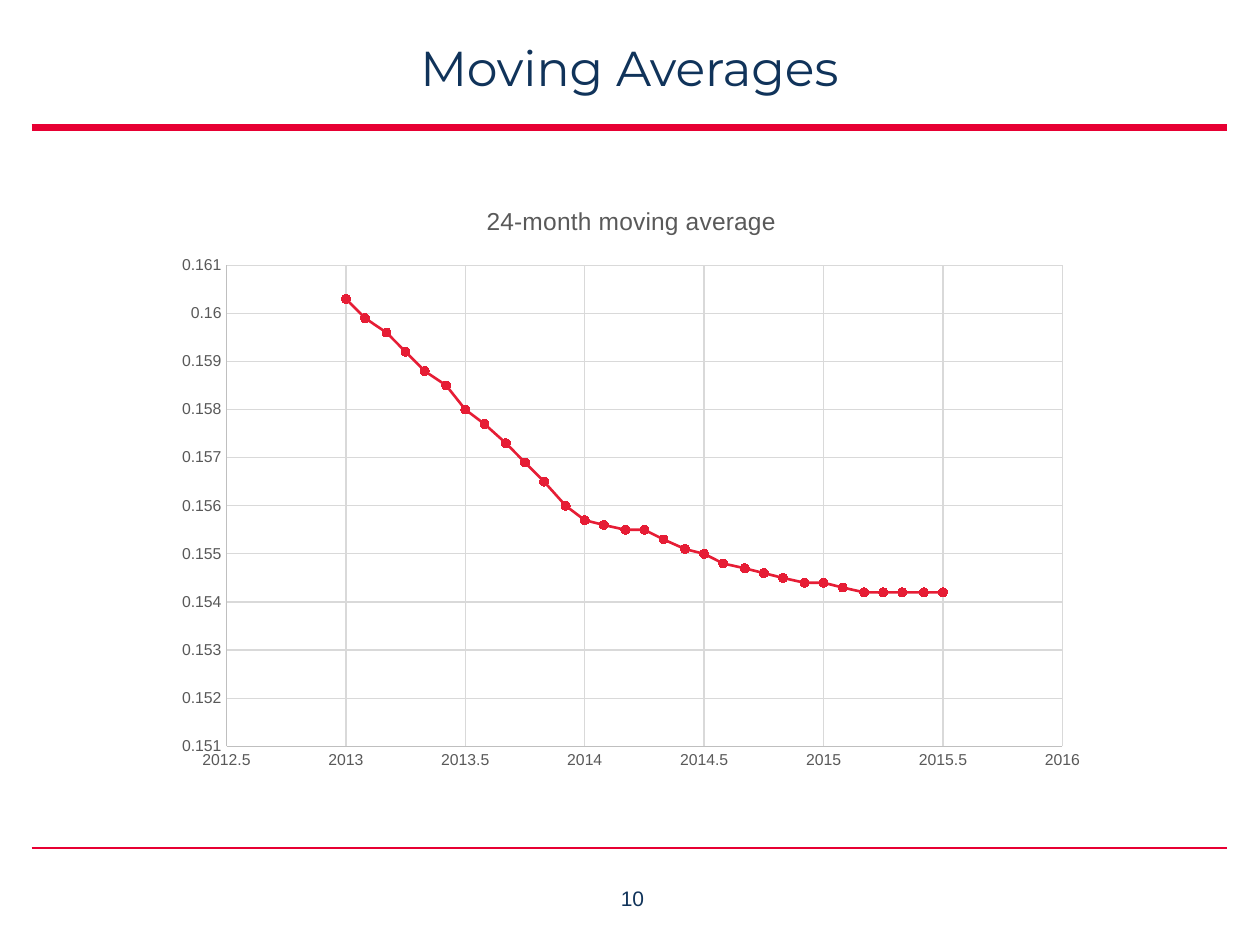
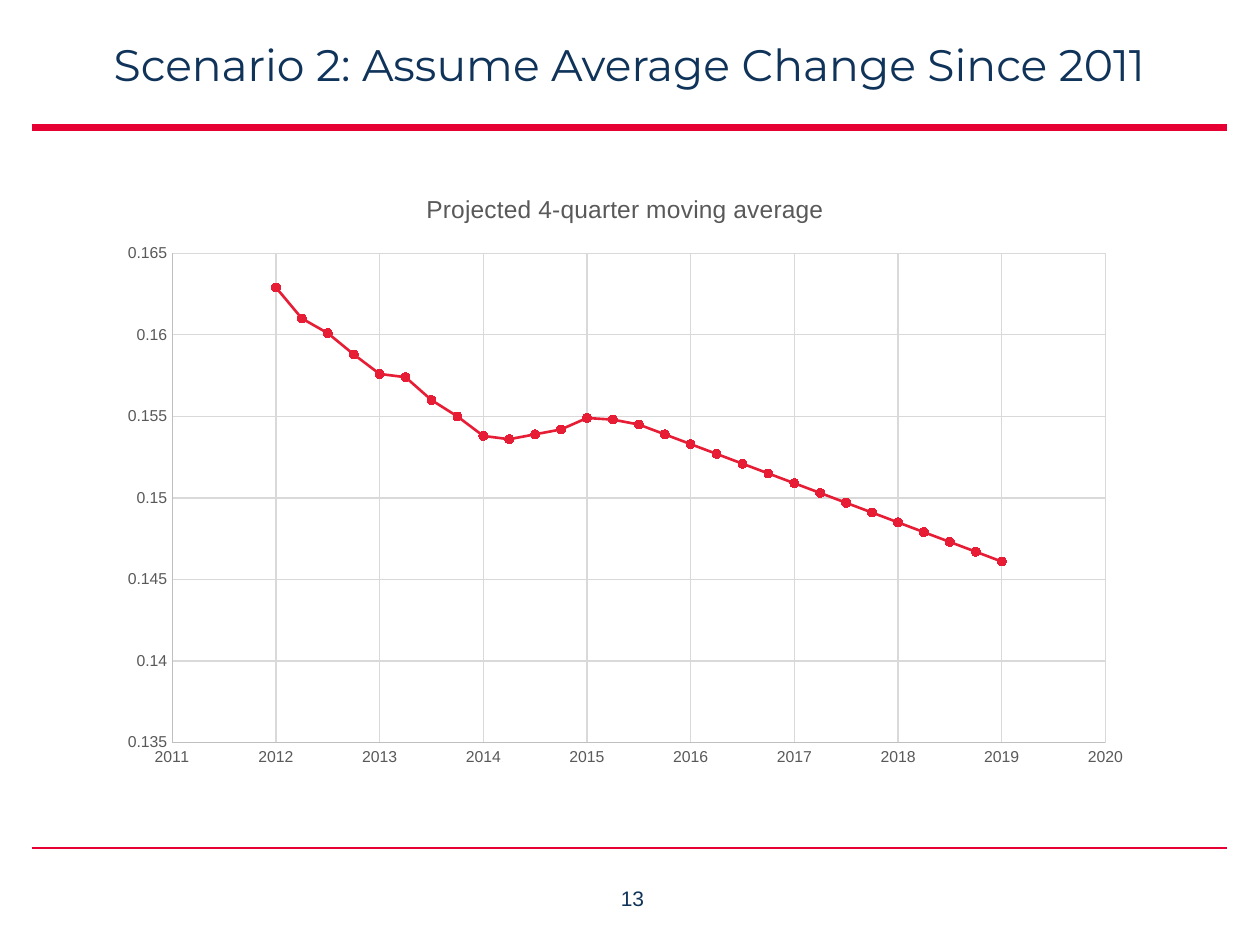
from lxml import etree
from pptx import Presentation
from pptx.chart.data import XyChartData
from pptx.dml.color import RGBColor
from pptx.enum.chart import XL_CHART_TYPE, XL_MARKER_STYLE, XL_TICK_MARK
from pptx.enum.shapes import MSO_CONNECTOR
from pptx.enum.text import MSO_ANCHOR, MSO_AUTO_SIZE, PP_ALIGN
from pptx.oxml.ns import qn
from pptx.util import Inches, Pt

SCATTER = XL_CHART_TYPE.XY_SCATTER_LINES
CIRCLE = XL_MARKER_STYLE.CIRCLE
NO_TICK = XL_TICK_MARK.NONE
STRAIGHT = MSO_CONNECTOR.STRAIGHT
TOP = MSO_ANCHOR.TOP
CENTER = PP_ALIGN.CENTER
NO_FIT = MSO_AUTO_SIZE.NONE

NAVY, RULE_RED, SERIES_RED = "10335A", "E70033", "E61D35"
CHART_GREY, AXIS_GREY, GRID_GREY = "595959", "BFBFBF", "D9D9D9"
TITLE_FONT, BODY_FONT = "Montserrat", "Arial"
RULE_LEFT, RULE_RIGHT = 0.25, 9.74

MONTHLY_AVERAGES = [
    0.1603, 0.1599, 0.1596, 0.1592, 0.1588, 0.1585, 0.1580, 0.1577,
    0.1573, 0.1569, 0.1565, 0.1560, 0.1557, 0.1556, 0.1555, 0.1555,
    0.1553, 0.1551, 0.1550, 0.1548, 0.1547, 0.1546, 0.1545, 0.1544,
    0.1544, 0.1543, 0.1542, 0.1542, 0.1542, 0.1542, 0.1542,
]
QUARTERLY_AVERAGES = [
    0.1629, 0.1610, 0.1601, 0.1588, 0.1576, 0.1574, 0.1560, 0.1550,
    0.1538, 0.1536, 0.1539, 0.1542, 0.1549, 0.1548, 0.1545,
]
QUARTERLY_CHANGE = -0.0006
PROJECTED_QUARTERS = 14


def colour(hex_text):
    """Turn a hex string into a colour."""
    return RGBColor.from_string(hex_text)


def set_font(font, name, size, hex_text):
    """Set the face, size and colour of a font."""
    font.name, font.size, font.bold = name, Pt(size), False
    font.color.rgb = colour(hex_text)


def set_line(line, hex_text, width):
    """Set the colour and width of a line."""
    line.color.rgb = colour(hex_text)
    line.width = Pt(width)


def add_rule(page, y, width):
    """Draw a red rule across the page."""
    rule = page.shapes.add_connector(
        STRAIGHT, Inches(RULE_LEFT), Inches(y), Inches(RULE_RIGHT), Inches(y))
    set_line(rule.line, RULE_RED, width)
    etree.SubElement(rule.element.spPr, qn("a:effectLst"))


def add_title(page, text, size):
    """Place and format the title placeholder."""
    title = page.shapes.title
    title.left, title.top = Inches(RULE_LEFT), Inches(0.3)
    title.width, title.height = Inches(RULE_RIGHT - RULE_LEFT), Inches(0.71)
    frame = title.text_frame
    frame.margin_left = frame.margin_top = frame.margin_right = frame.margin_bottom = 0
    frame.vertical_anchor = TOP
    frame.auto_size = NO_FIT
    frame.text = text
    para = frame.paragraphs[0]
    para.alignment = CENTER
    set_font(para.font, TITLE_FONT, size, NAVY)


def add_page_number(page, number):
    """Write the page number below the lower rule."""
    box = page.shapes.add_textbox(Inches(4.52), Inches(6.98), Inches(1), Inches(0.38))
    box.text_frame.word_wrap = True
    para = box.text_frame.paragraphs[0]
    para.text = str(number)
    para.alignment = CENTER
    set_font(para.font, BODY_FONT, 12, NAVY)


def add_page(deck, title, title_size, number):
    """Add a page with its title, rules and number."""
    page = deck.slides.add_slide(deck.slide_layouts[5])
    add_rule(page, 1.01, 4)
    add_rule(page, 6.73, 1)
    add_page_number(page, number)
    add_title(page, title, title_size)
    return page


def set_layout(parent, position, target, **fractions):
    """Fix a chart part at fractions of the chart's size."""
    for old_layout in parent.findall(qn("c:layout")):
        parent.remove(old_layout)
    layout = etree.Element(qn("c:layout"))
    manual = etree.SubElement(layout, qn("c:manualLayout"))
    if target:
        etree.SubElement(manual, qn("c:layoutTarget")).set("val", target)
    for side in ("x", "y"):
        etree.SubElement(manual, qn(f"c:{side}Mode")).set("val", "edge")
    for side, fraction in fractions.items():
        etree.SubElement(manual, qn(f"c:{side}")).set("val", str(fraction))
    parent.insert(position, layout)


def format_axis(axis, low, high, step):
    """Scale an axis and style its line, grid and labels."""
    axis.minimum_scale, axis.maximum_scale, axis.major_unit = low, high, step
    axis.major_tick_mark = axis.minor_tick_mark = NO_TICK
    axis.has_major_gridlines = True
    set_line(axis.major_gridlines.format.line, GRID_GREY, 0.75)
    set_line(axis.format.line, AXIS_GREY, 0.75)
    set_font(axis.tick_labels.font, BODY_FONT, 9, CHART_GREY)
    axis.tick_labels.number_format = "General"
    axis.tick_labels.number_format_is_linked = False


def format_series(series):
    """Style the line and its round markers."""
    series.smooth = False
    set_line(series.format.line, SERIES_RED, 1.5)
    marker = series.marker
    marker.style, marker.size = CIRCLE, 5
    marker.format.fill.solid()
    marker.format.fill.fore_color.rgb = colour(SERIES_RED)
    set_line(marker.format.line, SERIES_RED, 0.75)


def add_average_chart(page, box, title, title_x, first_year, per_year, averages,
                      year_scale, value_scale, plot):
    """Plot averages against time in the given box."""
    data = XyChartData()
    points = data.add_series("Series 1")
    for index, average in enumerate(averages):
        points.add_data_point(round(first_year + index / per_year, 2), average)
    chart = page.shapes.add_chart(SCATTER, *map(Inches, box), data).chart
    set_font(chart.font, BODY_FONT, 10, "000000")
    chart.has_legend = False
    chart.plots[0].vary_by_categories = False

    chart.has_title = True
    frame = chart.chart_title.text_frame
    frame.text = title
    set_font(frame.paragraphs[0].font, BODY_FONT, 14, CHART_GREY)
    chart.chart_title.include_in_layout = False
    set_layout(chart.chart_title._element, 1, None, x=title_x, y=0.031)

    plot_area = chart.element.find(f".//{qn('c:plotArea')}")
    set_layout(plot_area, 0, "inner", **plot)
    format_axis(chart.category_axis, *year_scale)
    format_axis(chart.value_axis, *value_scale)
    format_series(chart.plots[0].series[0])


def add_monthly_page(deck):
    """Add the page of monthly moving averages."""
    page = add_page(deck, "Moving Averages", 28, 10)
    add_average_chart(
        page, (1.3, 1.45, 7.43, 4.75), "24-month moving average", 0.34,
        2013, 12, MONTHLY_AVERAGES, (2012.5, 2016, 0.5), (0.151, 0.161, 0.001),
        {"x": 0.067, "y": 0.138, "w": 0.893, "h": 0.804})


def add_scenario_page(deck):
    """Add the page that projects the average change."""
    page = add_page(deck, "Scenario 2: Assume Average Change Since 2011", 25.2, 13)
    projected = [round(QUARTERLY_AVERAGES[-1] + QUARTERLY_CHANGE * quarter, 4)
                 for quarter in range(1, PROJECTED_QUARTERS + 1)]
    add_average_chart(
        page, (0.85, 1.35, 8.22, 4.82), "Projected 4-quarter moving average", 0.304,
        2012, 4, QUARTERLY_AVERAGES + projected, (2011, 2020, 1), (0.135, 0.165, 0.005),
        {"x": 0.063, "y": 0.137, "w": 0.901, "h": 0.806})


def main():
    """Build and save the deck."""
    deck = Presentation()
    deck.slide_width, deck.slide_height = Inches(10), Inches(7.5)
    add_monthly_page(deck)
    add_scenario_page(deck)
    deck.save("out.pptx")


if __name__ == "__main__":
    main()
